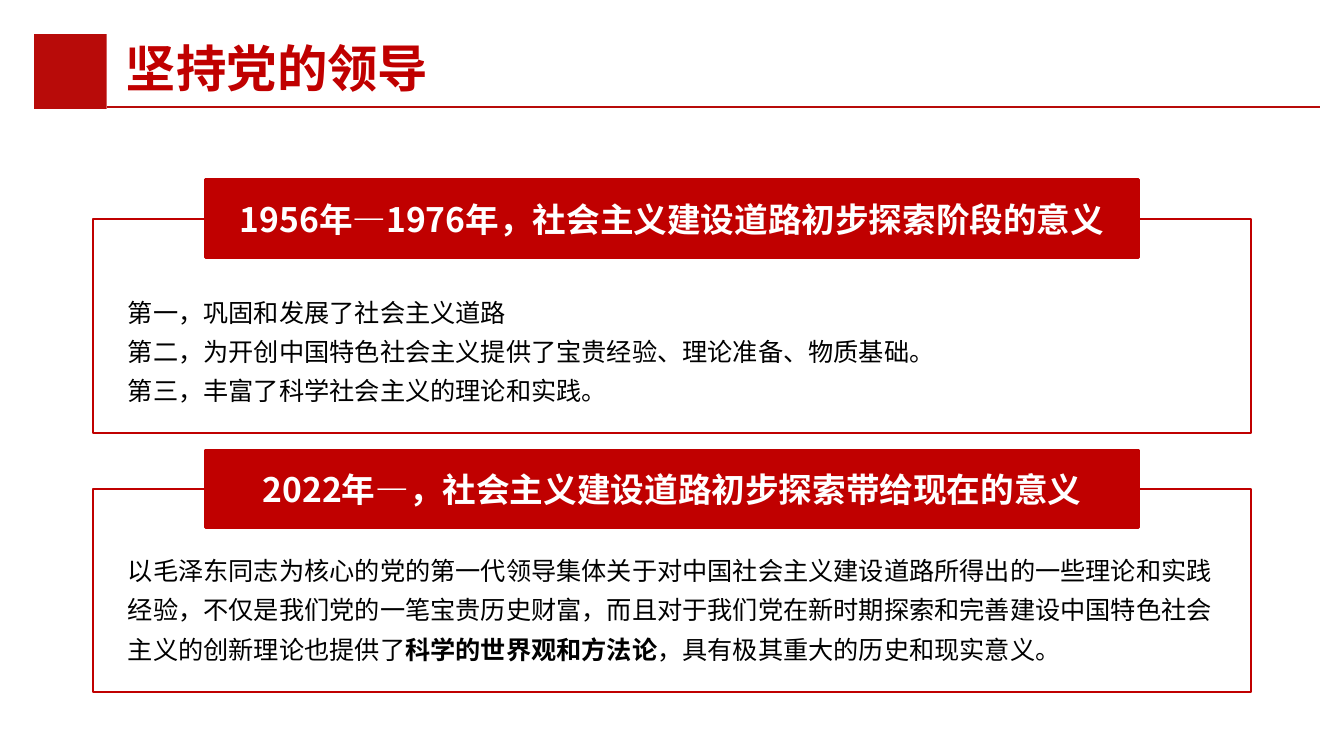
from collections import namedtuple
from dataclasses import dataclass

from lxml import etree
from pptx import Presentation
from pptx import util as u
from pptx.dml.color import RGBColor
from pptx.enum import shapes, text
from pptx.oxml.ns import qn

Box = namedtuple("Box", "left top width height")


@dataclass(frozen=True)
class Theme:
    face: str = "Noto Sans CJK SC"
    red: str = "C00000"
    marker: str = "B80B09"
    ink: str = "000000"
    paper: str = "FFFFFF"
    title: int = 36
    heading: int = 24
    body: int = 18
    rule: float = 1.5
    edge: int = 2
    leading: float = 1.3


THEME = Theme()
WIDTH, HEIGHT = u.Inches(13.33), u.Inches(7.5)
COLUMN, ROW = WIDTH / 100, HEIGHT / 100
HEADER = Box(2.55, 4.53, 95.65, 9.87)
PANEL_LEFT, PANEL_WIDTH = 6.9, 86.2
BANNER_WIDTH, BANNER_HEIGHT = 69.47, 10.27
BODY_INSET, BODY_HEIGHT = 1.88, 17.07

PANELS = [
    (28.93, 28.4, 8.53, text.PP_ALIGN.JUSTIFY,
     "1956年—1976年，社会主义建设道路初步探索阶段的意义",
     [[("第一，巩固和发展了社会主义道路", False)],
      [("第二，为开创中国特色社会主义提供了宝贵经验、理论准备、物质基础。", False)],
      [("第三，丰富了科学社会主义的理论和实践。", False)]]),
    (64.67, 26.93, 6.93, text.PP_ALIGN.LEFT,
     "2022年—，社会主义建设道路初步探索带给现在的意义",
     [[("以毛泽东同志为核心的党的第一代领导集体关于对中国社会主义建设道路所得出的"
        "一些理论和实践经验，不仅是我们党的一笔宝贵历史财富，而且对于我们党在新时期"
        "探索和完善建设中国特色社会主义的创新理论也提供了", False),
       ("科学的世界观和方法论", True),
       ("，具有极其重大的历史和现实意义。", False)]]),
]


def place(box):
    return [u.Emu(round(share)) for share in
            (box.left * COLUMN, box.top * ROW, box.width * COLUMN, box.height * ROW)]


def write(frame, paragraphs, size, color, **layout):
    frame.word_wrap = True
    for index, pieces in enumerate(paragraphs):
        line = frame.paragraphs[0] if index == 0 else frame.add_paragraph()
        for name, value in layout.items():
            setattr(line, name, value)
        for words, bold in pieces:
            run = line.add_run()
            run.text = words
            for name, value in {"size": u.Pt(size), "bold": bold, "name": THEME.face}.items():
                setattr(run.font, name, value)
            run.font.color.rgb = RGBColor.from_string(color)
            east_asian = etree.SubElement(run.font._element, qn("a:ea"))
            east_asian.set("typeface", THEME.face)


def add_text(slide, box, paragraphs, size, color, **layout):
    frame = slide.shapes.add_textbox(*place(box)).text_frame
    write(frame, paragraphs, size, color, **layout)
    frame.auto_size = text.MSO_AUTO_SIZE.SHAPE_TO_FIT_TEXT


def add_rectangle(slide, box, fill=None, line=None, weight=0):
    rectangle = slide.shapes.add_shape(shapes.MSO_SHAPE.RECTANGLE, *place(box))
    rectangle.shadow.inherit = False
    if fill:
        rectangle.fill.solid()
        rectangle.fill.fore_color.rgb = RGBColor.from_string(fill)
    else:
        rectangle.fill.background()
    if line:
        rectangle.line.color.rgb = RGBColor.from_string(line)
        rectangle.line.width = u.Pt(weight)
    else:
        rectangle.line.fill.background()
    return rectangle


def add_header(slide, box, title):
    marker = box._replace(width=5.4)
    add_rectangle(slide, marker, THEME.marker)
    left, top, right, _ = place(Box(marker.left + marker.width, 14.13,
                                    box.left + box.width, 0))
    rule = slide.shapes.add_connector(shapes.MSO_CONNECTOR.STRAIGHT, left, top, right, top)
    rule.line.color.rgb = RGBColor.from_string(THEME.marker)
    rule.line.width = u.Pt(THEME.rule)
    etree.SubElement(rule._element.spPr, qn("a:effectLst"))
    add_text(slide, Box(box.left + 6.08, box.top - 0.26, 35.93, 9.47),
             [[(title, True)]], THEME.title, THEME.red)


def add_panel(slide, box, body_drop, alignment, heading, paragraphs):
    add_rectangle(slide, box, line=THEME.red, weight=THEME.rule)
    body = Box(box.left + BODY_INSET, box.top + body_drop,
               box.width - 2 * BODY_INSET, BODY_HEIGHT)
    add_text(slide, body, paragraphs, THEME.body, THEME.ink,
             alignment=alignment, line_spacing=THEME.leading)
    banner_box = Box(box.left + (box.width - BANNER_WIDTH) / 2,
                     box.top - BANNER_HEIGHT / 2, BANNER_WIDTH, BANNER_HEIGHT)
    banner = add_rectangle(slide, banner_box, THEME.red, THEME.red, THEME.edge)
    banner.text_frame.vertical_anchor = text.MSO_ANCHOR.MIDDLE
    write(banner.text_frame, [[(heading, True)]], THEME.heading, THEME.paper,
          alignment=text.PP_ALIGN.CENTER)


def main():
    deck = Presentation()
    deck.slide_width, deck.slide_height = WIDTH, HEIGHT
    slide = deck.slides.add_slide(deck.slide_layouts[6])
    add_header(slide, HEADER, "坚持党的领导")
    for top, height, *content in PANELS:
        add_panel(slide, Box(PANEL_LEFT, top, PANEL_WIDTH, height), *content)
    deck.save("out.pptx")


if __name__ == "__main__":
    main()
